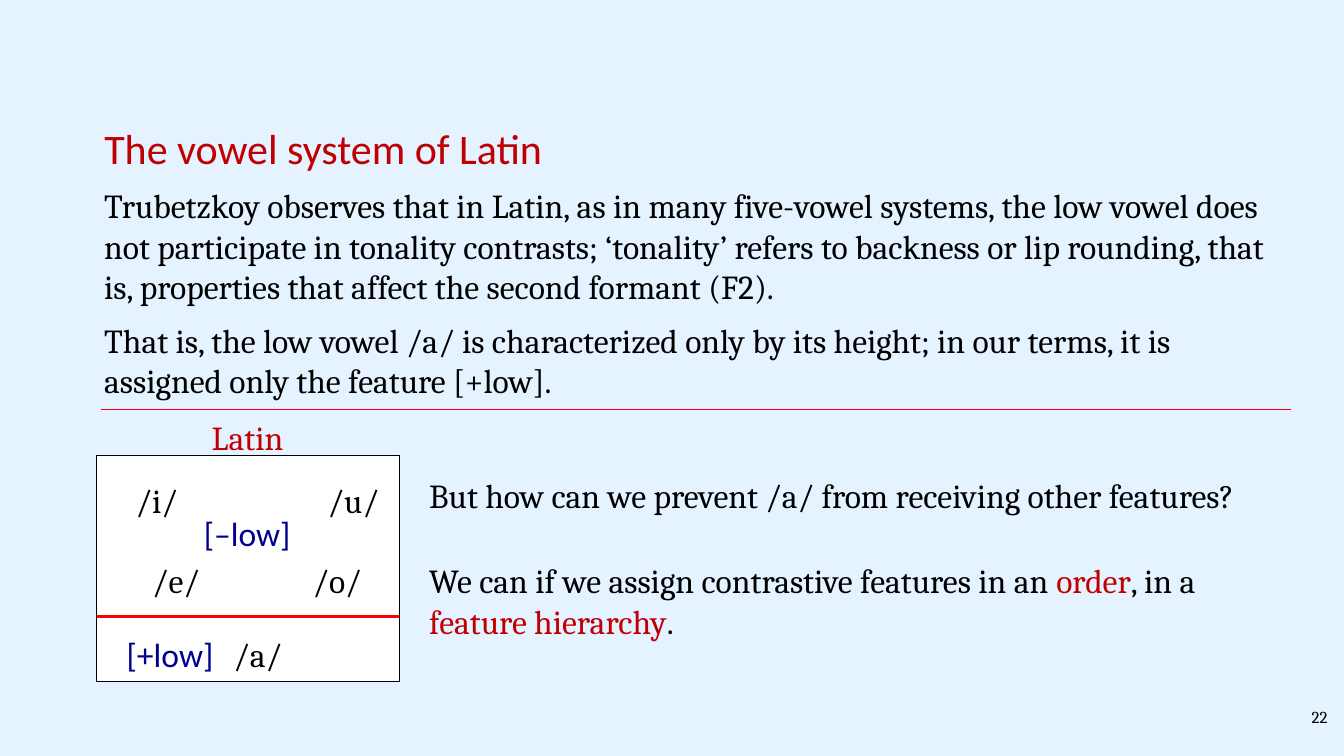
from pptx import Presentation
from pptx.dml.color import RGBColor
from pptx.enum import shapes, text
from pptx.oxml.ns import qn
from pptx.util import Inches, Pt
from lxml import etree

BLACK, RED, NAVY = "000000", "C00000", "000090"
LEFT, CENTER, RIGHT = text.PP_ALIGN.LEFT, text.PP_ALIGN.CENTER, text.PP_ALIGN.RIGHT


def rgb(value):
    return RGBColor.from_string(value)


def write(sp, box, runs, align=LEFT, wrap=True, font="Cambria", size=32):
    """Place sp at box (inches) and fill it with (text, colour) runs."""
    sp.left, sp.top, sp.width, sp.height = map(Inches, box)
    tf = sp.text_frame
    frame = {"word_wrap": wrap, "vertical_anchor": text.MSO_ANCHOR.TOP,
             "auto_size": text.MSO_AUTO_SIZE.NONE}
    for name, value in frame.items():
        setattr(tf, name, value)
    p = tf.paragraphs[0]
    p.alignment = align
    for words, color in runs:
        r = p.add_run()
        r.text = words
        for name, value in {"name": font, "size": Pt(size)}.items():
            setattr(r.font, name, value)
        r.font.color.rgb = rgb(color)


prs = Presentation()
prs.slide_width, prs.slide_height = Inches(17.78), Inches(10)
s = prs.slides.add_slide(prs.slide_layouts[5])
s.background.fill.solid()
s.background.fill.fore_color.rgb = rgb("E5F2FF")

write(s.shapes.title, (1.28, 1.57, 9.2, 0.77),
      [("The vowel system of Latin", RED)], font="Calibri", size=40)

# Vowel chart frame, divided by the low/non-low boundary
chart = s.shapes.add_shape(shapes.MSO_SHAPE.RECTANGLE,
                           Inches(1.28), Inches(6.02), Inches(4), Inches(3))
chart.shadow.inherit = False
chart.fill.solid()
chart.fill.fore_color.rgb = rgb("FFFFFF")
chart.line.color.rgb = rgb(BLACK)
chart.line.width = Pt(0.75)

for x1, x2, y, weight in [(1.28, 5.28, 8.16, 3), (1.33, 17.08, 5.41, 0.75)]:
    rule = s.shapes.add_connector(shapes.MSO_CONNECTOR.STRAIGHT,
                                  Inches(x1), Inches(y), Inches(x2), Inches(y))
    rule.line.color.rgb = rgb("FF0000")
    rule.line.width = Pt(weight)
    etree.SubElement(rule._element.spPr, qn("a:effectLst"))

# Labels of the vowel chart
labels = [
    ("Latin", 2.68, 5.46, 1.19, RED, "Cambria"),
    ("/i/", 1.69, 6.3, 0.77, BLACK, "Cambria"),
    ("/u/", 4.23, 6.3, 0.89, BLACK, "Cambria"),
    ("[–low]", 2.59, 6.73, 1.36, NAVY, "Calibri"),
    ("/e/", 1.9, 7.36, 0.86, BLACK, "Cambria"),
    ("/o/", 4.02, 7.36, 0.88, BLACK, "Cambria"),
    ("[+low]", 1.57, 8.33, 1.36, NAVY, "Calibri"),
    ("/a/", 2.98, 8.33, 0.86, BLACK, "Cambria"),
]
for words, x, y, w, color, font in labels:
    write(s.shapes.add_textbox(0, 0, 0, 0), (x, y, w, 0.64),
          [(words, color)], align=CENTER, wrap=False, font=font)

# Running text
passages = [
    ((1.28, 2.4, 15.75, 1.72),
     [("Trubetzkoy observes that in Latin, as in many five-vowel systems, the low "
       "vowel does not participate in tonality contrasts; ‘tonality’ refers to "
       "backness or lip rounding, that is, properties that affect the second "
       "formant (F2).", BLACK)]),
    ((1.28, 4.18, 15.75, 1.18),
     [("That is, the low vowel /a/ is characterized only by its height; in our "
       "terms, it is assigned only the feature [+low].", BLACK)]),
    ((5.58, 6.23, 11.46, 0.91),
     [("But how can we prevent /a/ from receiving other features?", BLACK)]),
    ((5.58, 7.36, 11.46, 1.31),
     [("We can if we assign contrastive features in an ", BLACK), ("order", RED),
      (", in a ", BLACK), ("feature hierarchy", RED), (".", BLACK)]),
]
for box, runs in passages:
    write(s.shapes.add_textbox(0, 0, 0, 0), box, runs)

write(s.shapes.add_textbox(0, 0, 0, 0), (15.58, 9.3, 2.08, 0.5),
      [("22", BLACK)], align=RIGHT, size=16)

prs.save("out.pptx")
